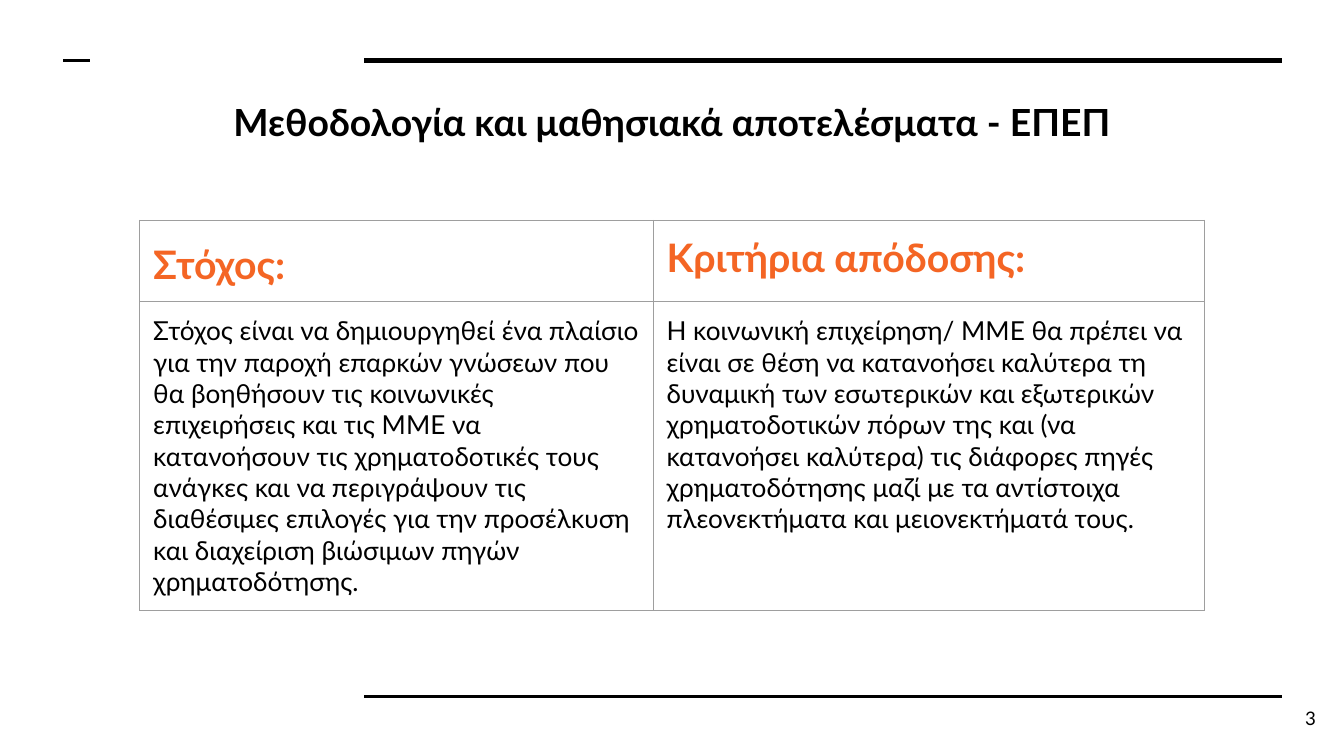
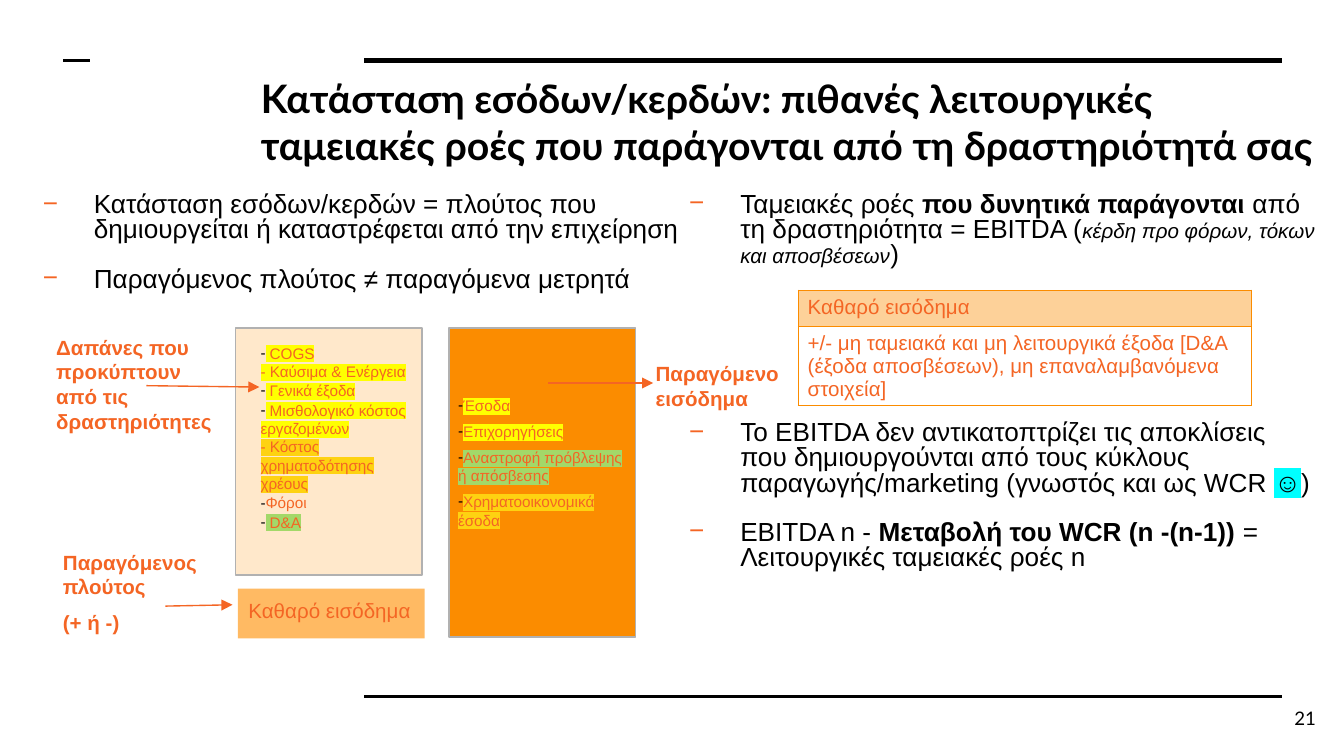
"""Build two slides on business finance: learning outcomes and the income statement."""
from copy import deepcopy
from dataclasses import asdict, dataclass
from functools import partial
from typing import Optional, Sequence

import lxml.etree
import pptx
import pptx.dml.color
import pptx.enum.shapes
import pptx.enum.text
import pptx.oxml
import pptx.oxml.ns
import pptx.util
from pptx.util import Inches

ALIGN = pptx.enum.text.PP_ALIGN
qn = pptx.oxml.ns.qn


@dataclass(frozen=True)
class Theme:
    """Colours, fonts and type sizes of the deck."""
    ink: str = "000000"
    accent: str = "F46524"
    orange: str = "FB8C00"
    cream: str = "FFE8CB"
    apricot: str = "FFBA63"
    outline: str = "B1B1B1"
    grid: str = "9E9E9E"
    yellow: str = "FFFF00"
    gold: str = "FED211"
    green: str = "A3D869"
    cyan: str = "00FFFF"
    heading_font: str = "Lato"
    body_font: str = "Arial"
    heading: float = 21
    title: float = 20
    body: float = 14
    label: float = 11
    number: float = 10
    entry: float = 8.2


THEME = Theme()


@dataclass(frozen=True)
class Span:
    """A stretch of text with one format."""
    text: str
    size: float = THEME.body
    font: str = THEME.body_font
    color: str = THEME.ink
    bold: bool = False
    italic: bool = False
    highlight: Optional[str] = None


@dataclass(frozen=True)
class Para:
    """A paragraph of spans with spacing and an optional bullet."""
    spans: Sequence[Span]
    align: ALIGN = ALIGN.LEFT
    line: float = 1.0
    before: float = 0
    bullet: str = ""
    bullet_color: str = THEME.ink
    left: float = 0
    hang: float = 0


@dataclass(frozen=True)
class Area:
    """A rectangle on the slide, in inches."""
    left: float
    top: float
    width: float
    height: float

    def emu(self) -> tuple:
        """Return the four lengths for python-pptx."""
        return tuple(Inches(value) for value in (self.left, self.top, self.width, self.height))


@dataclass(frozen=True)
class Line:
    """A straight line between two points."""
    start: tuple
    end: tuple
    color: str = THEME.ink
    weight: float = 1.5
    arrow: bool = False


@dataclass(frozen=True)
class Block:
    """A filled rectangle."""
    area: Area
    fill: str
    outline: Optional[str] = None


@dataclass(frozen=True)
class Label:
    """A text box."""
    area: Area
    paras: Sequence[Para]
    inset: float = 0.05


FRAME = (
    Line((2.71, 0.45), (9.54, 0.45), weight=3),
    Line((2.71, 5.18), (9.54, 5.18)),
    Line((0.47, 0.45), (0.67, 0.45)),
)
Heading = partial(Span, font=THEME.heading_font, size=THEME.heading, bold=True)
Lesson = partial(Span, font=THEME.heading_font)
Note = partial(Span, size=THEME.label, color=THEME.accent)
Entry = partial(Span, size=THEME.entry, color=THEME.accent)
Arrow = partial(Line, color=THEME.accent, weight=0.75, arrow=True)
Point = partial(Para, line=0.8, bullet="−", bullet_color=THEME.accent, left=0.5, hang=-0.38)
Item = partial(Para, bullet="-", hang=-0.06)


def rgb(color: str) -> pptx.dml.color.RGBColor:
    """Turn a hex string into a colour."""
    return pptx.dml.color.RGBColor.from_string(color)


def add_node(parent, tag: str, **attributes: str):
    """Append a drawing element to a parent."""
    return lxml.etree.SubElement(parent, qn(tag), attributes)


def write_span(para, text: str, *, size: float, font: str, color: str,
               bold: bool, italic: bool, highlight: Optional[str]) -> None:
    """Write formatted text, with a line break at each newline."""
    for index, part in enumerate(text.split("\n")):
        if index:
            para.add_line_break()
            para._p[-1].append(deepcopy(span.font._element))
        if not part:
            continue
        span = para.add_run()
        span.text = part
        span.font.size = pptx.util.Pt(size)
        span.font.name = font
        span.font.bold = bold
        span.font.italic = italic
        span.font.color.rgb = rgb(color)
        if highlight:
            mark = lxml.etree.Element(qn("a:highlight"))
            add_node(mark, "a:srgbClr", val=highlight)
            span.font._element.find(qn("a:solidFill")).addnext(mark)


def fill_text(frame, paras: Sequence[Para]) -> None:
    """Write paragraphs into a text frame."""
    for index, item in enumerate(paras):
        para = frame.paragraphs[0] if index == 0 else frame.add_paragraph()
        para.alignment = item.align
        para.line_spacing = item.line
        para.space_before = pptx.util.Pt(item.before)
        if item.bullet:
            properties = para._p.get_or_add_pPr()
            properties.set("marL", str(Inches(item.left)))
            properties.set("indent", str(Inches(item.hang)))
            add_node(add_node(properties, "a:buClr"), "a:srgbClr", val=item.bullet_color)
            add_node(properties, "a:buFont", typeface=THEME.body_font)
            add_node(properties, "a:buChar", char=item.bullet)
        for span in item.spans:
            write_span(para, **asdict(span))


def set_frame(frame, inset: float, anchor=pptx.enum.text.MSO_ANCHOR.TOP) -> None:
    """Set wrapping, anchor and insets of a text frame."""
    frame.word_wrap = True
    frame.auto_size = pptx.enum.text.MSO_AUTO_SIZE.NONE
    frame.vertical_anchor = anchor
    frame.margin_left = frame.margin_right = Inches(0.1)
    frame.margin_top = frame.margin_bottom = Inches(inset)


def add_label(page, label: Label, **options) -> None:
    """Add a text box."""
    box = page.shapes.add_textbox(*label.area.emu())
    set_frame(box.text_frame, label.inset, **options)
    fill_text(box.text_frame, label.paras)


def add_block(page, block: Block) -> None:
    """Add a filled rectangle."""
    box = page.shapes.add_shape(pptx.enum.shapes.MSO_SHAPE.RECTANGLE, *block.area.emu())
    box.shadow.inherit = False
    box.fill.solid()
    box.fill.fore_color.rgb = rgb(block.fill)
    if block.outline:
        box.line.color.rgb = rgb(block.outline)
        box.line.width = pptx.util.Pt(0.75)
    else:
        box.line.fill.background()


def add_line(page, line: Line) -> None:
    """Add a straight connector, with an arrowhead if asked."""
    ends = (Inches(value) for value in line.start + line.end)
    connector = page.shapes.add_connector(pptx.enum.shapes.MSO_CONNECTOR.STRAIGHT, *ends)
    connector.line.color.rgb = rgb(line.color)
    connector.line.width = pptx.util.Pt(line.weight)
    if line.arrow:
        add_node(connector.line._get_or_add_ln(), "a:tailEnd", type="triangle")
    add_node(connector._element.spPr, "a:effectLst")


def add_grid(page, area: Area, columns: Sequence[float], rows: Sequence[float],
             cells: Sequence[Sequence[Para]], border: str, margins: tuple,
             header_fill: Optional[str] = None) -> None:
    """Add a table with even borders and an optional tinted header."""
    table = page.shapes.add_table(len(rows), len(columns), *area.emu()).table
    table.first_row = table.horz_banding = False
    for column, width in zip(table.columns, columns):
        column.width = Inches(width)
    for row, height in zip(table.rows, rows):
        row.height = Inches(height)
    for row_index, paras in enumerate(cells):
        for column_index, para in enumerate(paras):
            cell = table.cell(row_index, column_index)
            cell.margin_left = cell.margin_right = Inches(margins[0])
            cell.margin_top = cell.margin_bottom = Inches(margins[1])
            fill_text(cell.text_frame, [para])
            properties = cell._tc.get_or_add_tcPr()
            for side in ("L", "R", "T", "B"):
                edge = add_node(properties, f"a:ln{side}", w=str(pptx.util.Pt(0.75)))
                add_node(add_node(edge, "a:solidFill"), "a:srgbClr", val=border)
            if header_fill and row_index == 0:
                cell.fill.solid()
                cell.fill.fore_color.rgb = rgb(header_fill)
                add_node(properties.find(qn("a:solidFill"))[0], "a:alpha", val="40000")
            else:
                cell.fill.background()


def add_page(deck, title: Para, area: Area, number: str):
    """Add a slide with its title, frame lines and number."""
    page = deck.slides.add_slide(deck.slide_layouts[5])
    for line in FRAME:
        add_line(page, line)
    box = page.shapes.title
    box.left, box.top, box.width, box.height = area.emu()
    set_frame(box.text_frame, 0.1)
    fill_text(box.text_frame, [title])
    digits = Span(number, size=THEME.number, font=THEME.heading_font)
    add_label(page, Label(Area(9.29, 5.13, 0.6, 0.43), [Para([digits], align=ALIGN.RIGHT)], 0.1),
              anchor=pptx.enum.text.MSO_ANCHOR.MIDDLE)
    return page


def build_outcomes(deck) -> None:
    """Build the slide on method and learning outcomes."""
    title = Heading("Μεθοδολογία και μαθησιακά αποτελέσματα - EΠΕΠ", size=THEME.title)
    page = add_page(deck, Para([title], align=ALIGN.CENTER), Area(1.41, 0.64, 7.18, 0.69), "3")
    cells = (
        (Para([Heading("Στόχος:", color=THEME.accent)], line=1.15),
         Para([Heading("Κριτήρια απόδοσης:", color=THEME.accent)])),
        (Para([Lesson("Στόχος είναι να δημιουργηθεί ένα πλαίσιο για την παροχή επαρκών γνώσεων που θα βοηθήσουν τις κοινωνικές επιχειρήσεις και τις ΜΜΕ να κατανοήσουν τις χρηματοδοτικές τους ανάγκες και να περιγράψουν τις διαθέσιμες επιλογές για την προσέλκυση και διαχείριση βιώσιμων πηγών χρηματοδότησης.")]),
         Para([Lesson("Η κοινωνική επιχείρηση/ ΜΜΕ θα πρέπει να είναι σε θέση να κατανοήσει καλύτερα τη δυναμική των εσωτερικών και εξωτερικών χρηματοδοτικών πόρων της και (να κατανοήσει καλύτερα) τις διάφορες πηγές χρηματοδότησης μαζί με τα αντίστοιχα πλεονεκτήματα και μειονεκτήματά τους.")])),
    )
    add_grid(page, Area(1.04, 1.64, 7.92, 2.9), (3.82, 4.1), (0.6, 2.3), cells,
             THEME.grid, (0.1, 0.1))


def build_income(deck) -> None:
    """Build the slide on the income statement and cash flows."""
    title = Heading("Κατάσταση εσόδων/κερδών: πιθανές λειτουργικές ταμειακές ροές που παράγονται από τη δραστηριότητά σας")
    page = add_page(deck, Para([title]), Area(1.84, 0.45, 8.16, 0.82), "21")
    blocks = (
        Block(Area(1.75, 2.44, 1.39, 1.84), THEME.cream, THEME.outline),
        Block(Area(3.34, 2.44, 1.39, 2.3), THEME.orange, THEME.outline),
        Block(Area(1.77, 4.38, 1.39, 0.37), THEME.apricot),
    )
    wealth = [
        Point([Span("Κατάσταση εσόδων/κερδών = πλούτος που δημιουργείται ή καταστρέφεται από την επιχείρηση")]),
        Point([Span("Παραγόμενος πλούτος ≠ παραγόμενα μετρητά")], before=13),
    ]
    costs = [
        Item([Entry(" COGS\n- Καύσιμα & Ενέργεια", highlight=THEME.yellow)]),
        Item([Entry(" Γενικά έξοδα", highlight=THEME.yellow)], before=0.5),
        Item([Entry(" Μισθολογικό κόστος εργαζομένων\n", highlight=THEME.yellow),
              Entry("- Κόστος χρηματοδότησης χρέους", highlight=THEME.gold)], before=0.5),
        Item([Entry("Φόροι")], before=0.5),
        Item([Entry(" D&A", highlight=THEME.green)], before=0.5),
    ]
    revenues = (("Έσοδα", THEME.yellow), ("Επιχορηγήσεις", THEME.yellow),
                ("Αναστροφή πρόβλεψης ή απόσβεσης", THEME.green),
                ("Χρηματοοικονομικά έσοδα", THEME.gold))
    income = [Item([Entry(text, highlight=mark)], before=4.1 if index else 0)
              for index, (text, mark) in enumerate(revenues)]
    cash = [
        Point([Span("Ταμειακές ροές "), Span("που δυνητικά παράγονται ", bold=True),
               Span("από τη δραστηριότητα = EBITDA ("),
               Span("κέρδη προ φόρων, τόκων και αποσβέσεων", size=THEME.label, italic=True),
               Span(")")]),
        Point([Span("Το EBITDA δεν αντικατοπτρίζει τις αποκλίσεις που δημιουργούνται από τους κύκλους παραγωγής/marketing (γνωστός και ως WCR "),
               Span("☺", highlight=THEME.cyan), Span(")")], before=82),
        Point([Span("EBITDA n - "), Span("Μεταβολή του WCR (n -(n-1)) ", bold=True),
               Span("= Λειτουργικές ταμειακές ροές n")], before=13),
    ]
    labels = (
        Label(Area(0.1, 1.34, 5.07, 3.89), wealth, 0.1),
        Label(Area(1.84, 2.51, 1.39, 2), costs),
        Label(Area(3.31, 2.9, 1.49, 1.3), income),
        Label(Area(4.78, 2.64, 1.17, 0.47), [Para([Note("Παραγόμενο εισόδημα", bold=True)])]),
        Label(Area(0.32, 2.44, 1.39, 0.84),
              [Para([Note("Δαπάνες που προκύπτουν από τις δραστηριότητες", bold=True)])]),
        Label(Area(0.37, 4.04, 1.2, 0.76), [Para([Note("Παραγόμενος πλούτος", bold=True)]),
                                            Para([Note("(+ ή -)", bold=True)], before=6)]),
        Label(Area(1.75, 4.4, 1.57, 0.29), [Para([Note("Καθαρό εισόδημα")])]),
        Label(Area(4.91, 1.34, 4.99, 3.06), cash, 0.1),
    )
    arrows = (Arrow((1.09, 2.87), (1.93, 2.88)), Arrow((4.08, 2.85), (4.86, 2.85)),
              Arrow((1.23, 4.51), (1.73, 4.5)))
    for draw, items in ((add_block, blocks), (add_label, labels), (add_line, arrows)):
        for item in items:
            draw(page, item)
    cells = ((Para([Note("Καθαρό εισόδημα")]),),
             (Para([Note("+/- μη ταμειακά και μη λειτουργικά έξοδα [D&A (έξοδα αποσβέσεων), μη επαναλαμβανόμενα στοιχεία]")]),))
    add_grid(page, Area(5.94, 2.16, 3.37, 0.86), (3.37,), (0.27, 0.59), cells,
             THEME.orange, (0.07, 0.04), header_fill=THEME.orange)


def main() -> None:
    """Build and save the deck."""
    deck = pptx.Presentation()
    deck.slide_width = Inches(10)
    deck.slide_height = deck.slide_width * 9 // 16
    build_outcomes(deck)
    build_income(deck)
    deck.save("out.pptx")


if __name__ == "__main__":
    main()
